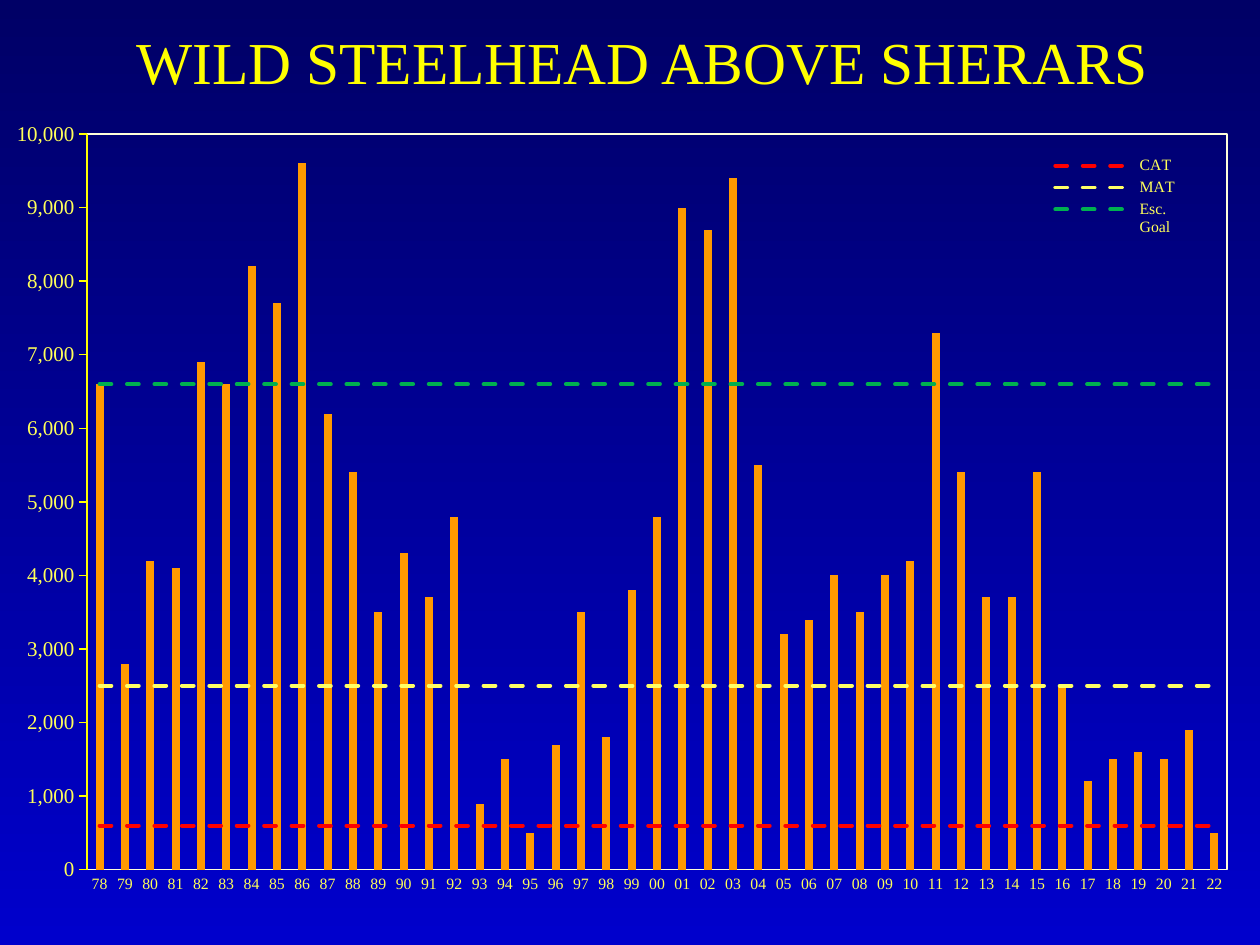
from pptx import Presentation, util as u
from pptx.chart.data import CategoryChartData
from pptx.dml.color import RGBColor
from pptx.enum import chart as ch, dml, text
from pptx.oxml import parse_xml
from pptx.oxml.ns import nsdecls, qn

NAVY = RGBColor(0x00, 0x00, 0x66)
BLUE = RGBColor(0x00, 0x00, 0xCC)
YELLOW = RGBColor(0xFF, 0xFF, 0x00)
SOFT_YELLOW = RGBColor(0xFF, 0xFF, 0x59)
CREAM = RGBColor(0xFF, 0xFF, 0xD9)
ORANGE = RGBColor(0xFF, 0x99, 0x00)
RED = RGBColor(0xFF, 0x00, 0x00)
LEMON = RGBColor(0xFF, 0xFF, 0x66)
GREEN = RGBColor(0x00, 0xB0, 0x50)

YEARS = [f"{year % 100:02d}" for year in range(1978, 2023)]
FISH = [
    6600, 2800, 4200, 4100, 6900, 6600, 8200, 7700, 9600, 6200, 5400, 3500,
    4300, 3700, 4800, 900, 1500, 500, 1700, 3500, 1800, 3800, 4800, 9000,
    8700, 9400, 5500, 3200, 3400, 4000, 3500, 4000, 4200, 7300, 5400, 3700,
    3700, 5400, 2500, 1200, 1500, 1600, 1500, 1900, 500,
]
THRESHOLDS = [("CAT", 600, RED), ("MAT", 2500, LEMON), ("Esc. Goal", 6600, GREEN)]


def set_layout(parent, position, share, inner=False):
    """Place a chart part by shares (x, y, w, h) of the chart's size."""
    old = parent.find(qn("c:layout"))
    if old is not None:
        parent.remove(old)
    target = '<c:layoutTarget val="inner"/>' if inner else ""
    modes = '<c:xMode val="edge"/><c:yMode val="edge"/>'
    sizes = "".join(f'<c:{tag} val="{value}"/>' for tag, value in zip("xywh", share))
    parent.insert(position, parse_xml(
        f'<c:layout {nsdecls("c")}><c:manualLayout>{target}{modes}{sizes}'
        "</c:manualLayout></c:layout>"))


def move_to_lines(chart):
    """Turn every series after the first into a line on the same axes."""
    bars = chart.plots[0]._element
    axes = "".join(f'<c:axId val="{axis.get("val")}"/>' for axis in bars.findall(qn("c:axId")))
    lines = parse_xml(
        f'<c:lineChart {nsdecls("c")}><c:grouping val="standard"/>'
        f'<c:varyColors val="0"/><c:marker val="1"/>{axes}</c:lineChart>')
    bars.addnext(lines)
    for series in bars.findall(qn("c:ser"))[1:]:
        invert = series.find(qn("c:invertIfNegative"))
        if invert is not None:
            series.remove(invert)
        lines.find(qn("c:marker")).addprevious(series)


class SlideBuilder:
    face = "Times New Roman"

    def __init__(self, deck):
        self.deck = deck
        self.slide = deck.slides.add_slide(deck.slide_layouts[6])

    def frame(self, x, y, w, h):
        """Turn shares of the slide's size into lengths."""
        width, height = self.deck.slide_width, self.deck.slide_height
        return [u.Emu(round(n)) for n in (x * width, y * height, w * width, h * height)]

    def style(self, font, size, color):
        font.name, font.size, font.bold = self.face, u.Pt(size), False
        font.color.rgb = color

    def background(self, top, bottom):
        fill = self.slide.background.fill
        fill.gradient()
        fill.gradient_angle = 270
        for stop, color, place in zip(fill.gradient_stops, (top, bottom), (0, 1)):
            stop.color.rgb, stop.position = color, place

    def title(self, words, share):
        box = self.slide.shapes.add_textbox(*self.frame(*share)).text_frame
        box.word_wrap = True
        box.vertical_anchor = text.MSO_ANCHOR.TOP
        para = box.paragraphs[0]
        para.alignment = text.PP_ALIGN.CENTER
        span = para.add_run()
        span.text = words
        self.style(span.font, 34, YELLOW)

    def axis(self, axis, size, color, tick):
        axis.has_major_gridlines = False
        axis.major_tick_mark, axis.minor_tick_mark = tick, ch.XL_TICK_MARK.NONE
        axis.format.line.color.rgb = color
        axis.format.line.width = u.Pt(0.75)
        self.style(axis.tick_labels.font, size, SOFT_YELLOW)

    def legend(self, chart, share):
        chart.has_legend = True
        legend = chart.legend
        legend.position = ch.XL_LEGEND_POSITION.RIGHT
        legend.include_in_layout = False
        self.style(legend.font, 9, SOFT_YELLOW)
        legend._element.insert(1, parse_xml(
            f'<c:legendEntry {nsdecls("c")}><c:idx val="0"/><c:delete val="1"/></c:legendEntry>'))
        set_layout(legend._element, 2, share)

    def chart(self, share):
        data = CategoryChartData(number_format="#,##0")
        data.categories = YEARS
        data.add_series("Series 1", FISH)
        for name, level, _ in THRESHOLDS:
            data.add_series(name, [level] * len(YEARS))
        chart = self.slide.shapes.add_chart(
            ch.XL_CHART_TYPE.COLUMN_CLUSTERED, *self.frame(*share), data).chart
        chart.has_title = False
        self.style(chart.font, 10, YELLOW)
        move_to_lines(chart)

        bars, lines = chart.plots
        bars.gap_width, bars.vary_by_categories = 219, False
        bars.series[0].format.fill.solid()
        bars.series[0].format.fill.fore_color.rgb = ORANGE
        for series, (_, _, color) in zip(lines.series, THRESHOLDS):
            line = series.format.line
            line.color.rgb, line.width = color, u.Pt(2.25)
            line.dash_style = dml.MSO_LINE.DASH
            series._element.find(".//" + qn("a:ln")).set("cap", "rnd")
            series.marker.style = ch.XL_MARKER_STYLE.NONE
            series.smooth = False

        self.axis(chart.category_axis, 9, CREAM, ch.XL_TICK_MARK.NONE)
        values = chart.value_axis
        self.axis(values, 12, YELLOW, ch.XL_TICK_MARK.OUTSIDE)
        values.minimum_scale, values.maximum_scale, values.major_unit = 0, 10000, 1000
        values.tick_labels.number_format = "#,##0"
        values.tick_labels.number_format_is_linked = False

        area = chart._chartSpace.chart.plotArea
        set_layout(area, 0, (0.069, 0.026, 0.905, 0.927), inner=True)
        area.append(parse_xml(
            f'<c:spPr {nsdecls("c", "a")}><a:noFill/><a:ln w="{u.Pt(0.75)}">'
            f'<a:solidFill><a:srgbClr val="{CREAM}"/></a:solidFill></a:ln></c:spPr>'))
        self.legend(chart, (0.83, 0.05, 0.11, 0.11))


def main():
    deck = Presentation()
    deck.slide_width, deck.slide_height = u.Inches(10), u.Inches(7.5)
    page = SlideBuilder(deck)
    page.background(NAVY, BLUE)
    page.title("WILD STEELHEAD ABOVE SHERARS", (0, 0.02, 1.02, 0.17))
    page.chart((0, 0.12, 1, 0.84))
    deck.save("out.pptx")


if __name__ == "__main__":
    main()
